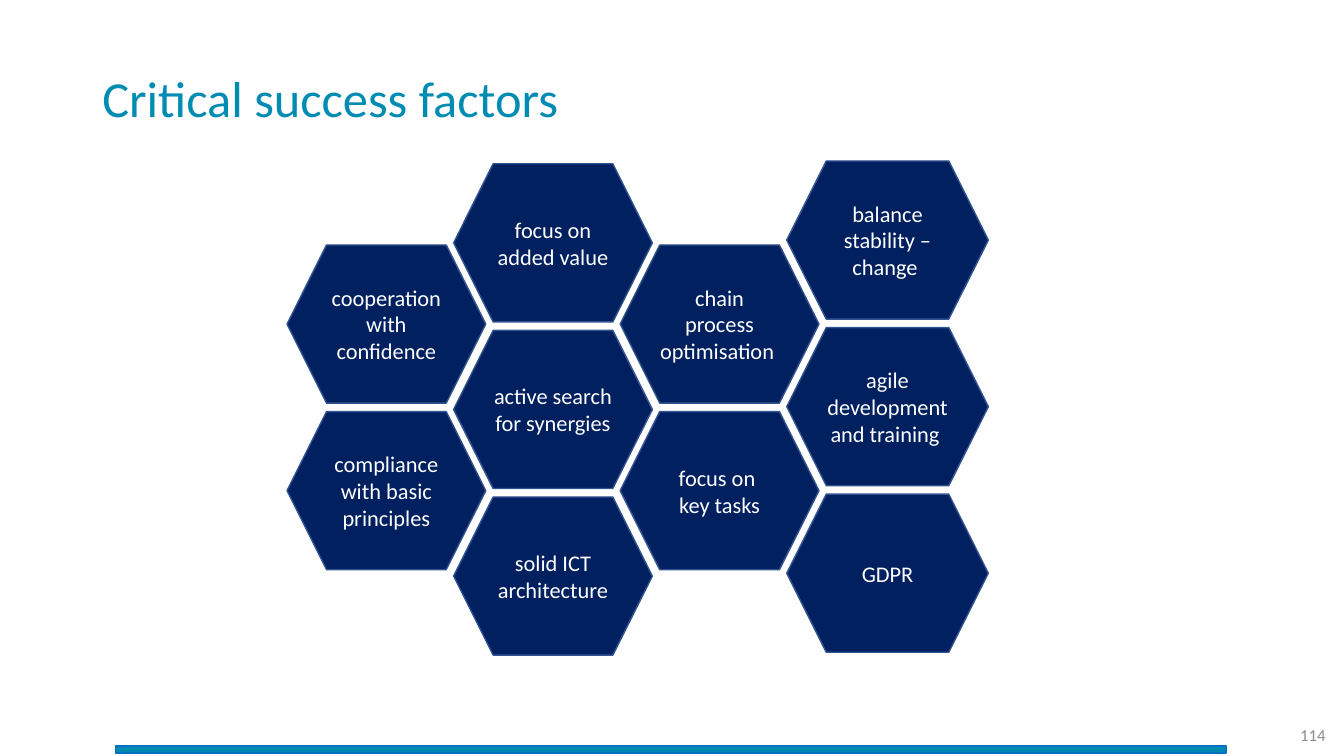
from dataclasses import dataclass

from pptx import Presentation
from pptx.dml.color import RGBColor
from pptx.enum import shapes, text
from pptx.shapes.autoshape import Shape
from pptx.slide import Slide
from pptx.util import Length, Pt

WHITE = RGBColor(0xFF, 0xFF, 0xFF)
NAVY = RGBColor(0x00, 0x20, 0x60)
NAVY_EDGE = RGBColor(0x32, 0x54, 0x91)
TEAL = RGBColor(0x00, 0x8C, 0xB2)
BLUE = RGBColor(0x00, 0x70, 0xC0)
GREY = RGBColor(0x8C, 0x8C, 0x8C)

FONT = "Calibri"
FIRST_LEFT = 205
PITCH = 119  # distance between neighbouring columns and between rows
HEXAGON_HEIGHT = 113


@dataclass(frozen=True)
class Box:
    left: float
    top: float
    width: float
    height: float

    def lengths(self) -> tuple[Length, Length, Length, Length]:
        return Pt(self.left), Pt(self.top), Pt(self.width), Pt(self.height)


@dataclass(frozen=True)
class Column:
    top: float
    width: float
    factors: tuple[str, ...]


COLUMNS = (
    Column(175, 142, ("cooperation with confidence", "compliance with basic principles")),
    Column(117, 142, ("focus on added value", "active search for synergies",
                      "solid ICT architecture")),
    Column(175, 142, ("chain\nprocess\noptimisation ", "focus on \nkey tasks")),
    Column(115, 144, ("balance stability – change ", "agile development and training ",
                      "GDPR")),
)


def write(shape: Shape, words: str, size: float, color: RGBColor,
          alignment: text.PP_ALIGN, line_spacing: float = 1.0) -> None:
    """Fill the shape with vertically centred text, one paragraph per line."""
    frame = shape.text_frame
    frame.word_wrap = True
    frame.vertical_anchor = text.MSO_ANCHOR.MIDDLE
    frame.text = words
    for paragraph in frame.paragraphs:
        paragraph.alignment = alignment
        paragraph.line_spacing = line_spacing
        paragraph.font.name = FONT
        paragraph.font.size = Pt(size)
        paragraph.font.color.rgb = color


def add_filled(slide: Slide, kind: shapes.MSO_SHAPE, box: Box,
               fill: RGBColor, edge: RGBColor) -> Shape:
    shape = slide.shapes.add_shape(kind, *box.lengths())
    shape.shadow.inherit = False
    shape.fill.solid()
    shape.fill.fore_color.rgb = fill
    shape.line.color.rgb = edge
    shape.line.width = Pt(1)
    return shape


def add_column(slide: Slide, column: Column, left: float) -> None:
    for row, factor in enumerate(column.factors):
        box = Box(left, column.top + row * PITCH, column.width, HEXAGON_HEIGHT)
        hexagon = add_filled(slide, shapes.MSO_SHAPE.HEXAGON, box, NAVY, NAVY_EDGE)
        write(hexagon, factor, 16, WHITE, text.PP_ALIGN.CENTER)


def main() -> None:
    presentation = Presentation()
    presentation.slide_width = Pt(960)
    presentation.slide_height = Pt(540)
    slide = presentation.slides.add_slide(presentation.slide_layouts[6])

    page_number = slide.shapes.add_textbox(*Box(895, 510.5, 59, 28.8).lengths())
    write(page_number, "114", 12, GREY, text.PP_ALIGN.RIGHT)
    add_filled(slide, shapes.MSO_SHAPE.RECTANGLE, Box(82.4, 533, 793.4, 5), TEAL, BLUE)
    title = slide.shapes.add_textbox(*Box(66, 20, 828, 104.4).lengths())
    write(title, "Critical success factors", 36, TEAL, text.PP_ALIGN.LEFT, 0.9)

    for index, column in enumerate(COLUMNS):
        add_column(slide, column, FIRST_LEFT + index * PITCH)

    presentation.save("out.pptx")


if __name__ == "__main__":
    main()
